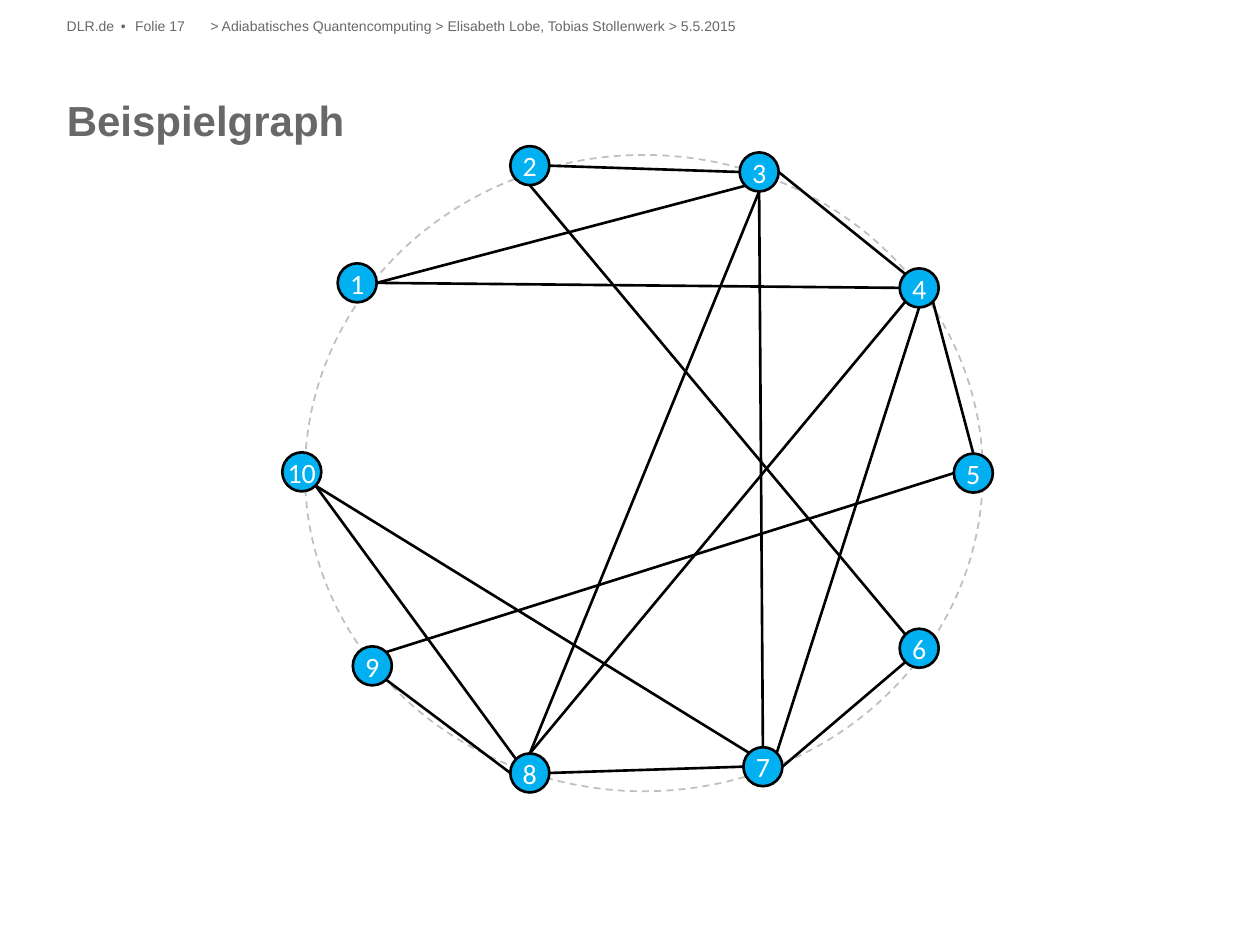
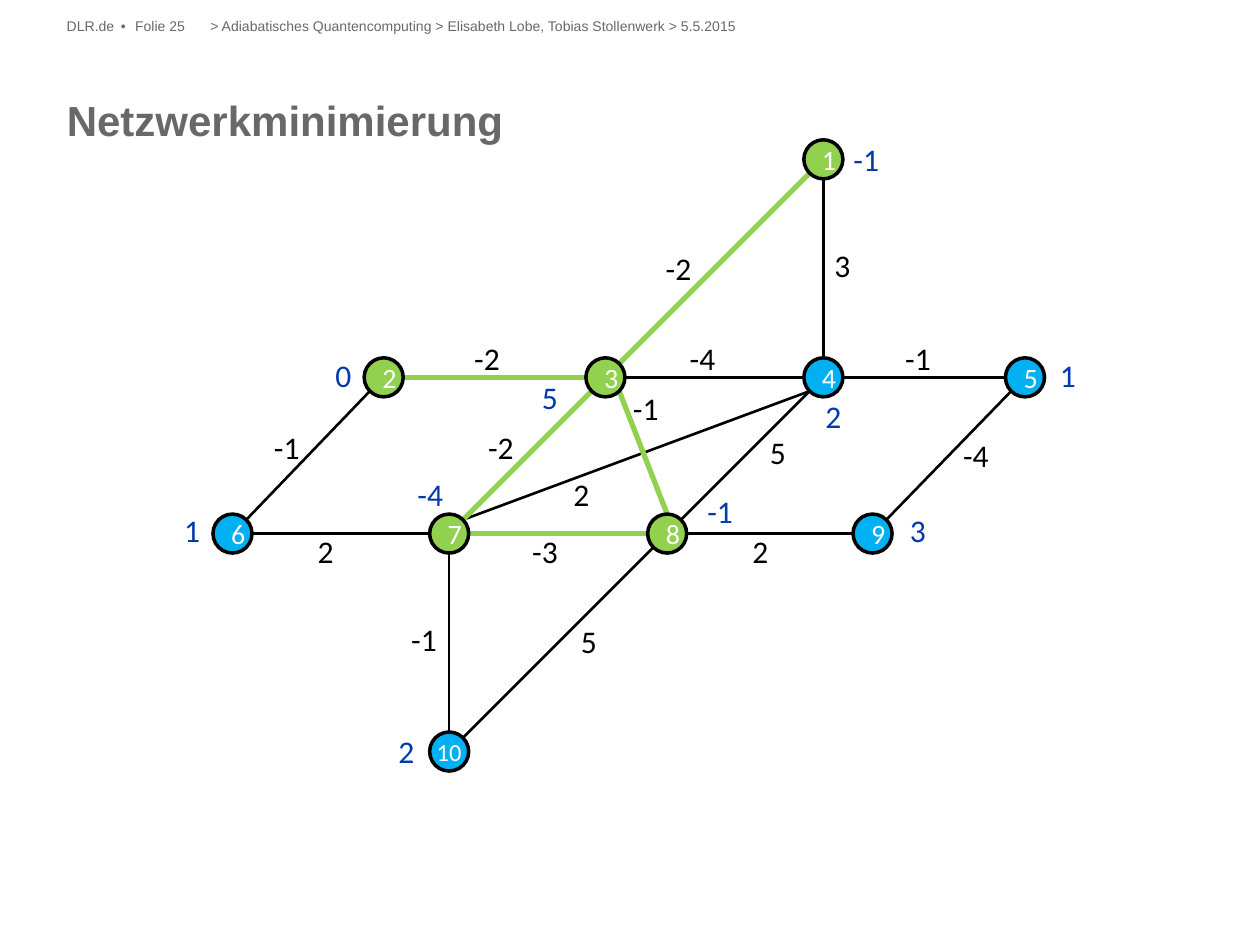
from pptx import Presentation
from pptx.dml.color import RGBColor
from pptx.enum import dml, shapes, text
from pptx.oxml.ns import qn
from pptx.util import Pt

SCALE = 9144  # EMU per px, 100 px to the inch
GREY, BLACK, WHITE = "686868", "000000", "FFFFFF"
BLUE, GREEN, NAVY, PALE = "00B0F0", "92D050", "0039AC", "BFBFBF"
NODE = 31

# Directions from a node's centre to the points where edges attach
D = 0.707
SITES = {"n": (0, -1), "ne": (D, -D), "e": (1, 0), "se": (D, D),
         "s": (0, 1), "sw": (-D, D), "w": (-1, 0), "nw": (-D, -D)}


def color(hex_string):
    return RGBColor.from_string(hex_string)


def add_run(p, words, size, font, hex_string, bold=False):
    r = p.add_run()
    r.text = words
    r.font.size, r.font.name, r.font.bold = Pt(size), font, bold
    r.font.color.rgb = color(hex_string)
    return r


# Node positions (left, top) and edges (node, site, node, site)
example = dict(
    title="Beispielgraph", number=17, wrap=False, outline=1.5,
    ring=(242, 123, 538, 505), marked=[], labels=[],
    nodes={1: (268, 209), 2: (405, 116), 3: (587, 121), 4: (714, 213),
           5: (757, 360), 6: (714, 499), 7: (590, 593), 8: (405, 598),
           9: (280, 513), 10: (224, 359)},
    edges=[(3, "s", 8, "n"), (7, "ne", 4, "s"), (6, "nw", 2, "s"),
           (2, "e", 3, "w"), (6, "sw", 7, "e"), (7, "n", 3, "s"),
           (7, "w", 8, "e"), (7, "nw", 10, "se"), (8, "n", 4, "sw"),
           (3, "e", 4, "nw"), (3, "sw", 1, "e"), (1, "e", 4, "w"),
           (4, "se", 5, "n"), (8, "w", 9, "se"), (10, "se", 8, "nw"),
           (9, "ne", 5, "w")])

TOP, MID, LOW, END = 111, 284, 408, 581  # node rows of the network
network = dict(
    title="Netzwerkminimierung", number=25, wrap=True, outline=2,
    ring=None, marked=[1, 2, 3, 7, 8],
    nodes={1: (638, TOP), 2: (289, MID), 3: (465, MID), 4: (638, MID),
           5: (798, MID), 6: (169, LOW), 7: (341, LOW), 8: (514, LOW),
           9: (677, LOW), 10: (341, END)},
    edges=[(7, "ne", 4, "sw"), (3, "se", 8, "n"), (6, "ne", 2, "sw"),
           (2, "e", 3, "w"), (6, "e", 7, "w"), (7, "ne", 3, "sw"),
           (7, "e", 8, "w"), (7, "s", 10, "n"), (8, "ne", 4, "sw"),
           (3, "e", 4, "w"), (3, "ne", 1, "sw"), (1, "s", 4, "n"),
           (4, "e", 5, "w"), (8, "e", 9, "w"), (10, "ne", 8, "sw"),
           (9, "ne", 5, "sw")],
    labels=[
        # node weights
        (NAVY, [("-1", 667, 106), ("0", 256, 278), ("5", 420, 295),
                ("2", 645, 310), ("1", 831, 278), ("3", 712, 401),
                ("-1", 551, 386), ("2", 306, 576), ("-4", 321, 372),
                ("1", 136, 401)]),
        # edge weights
        (BLACK, [("-2", 518, 193), ("3", 652, 190), ("-1", 708, 264),
                 ("-4", 754, 341), ("2", 587, 417), ("-2", 366, 264),
                 ("-1", 207, 335), ("2", 242, 417), ("5", 451, 489),
                 ("-1", 316, 487), ("-1", 492, 304), ("2", 445, 372),
                 ("-4", 537, 264), ("-3", 412, 417), ("-2", 377, 335),
                 ("5", 601, 339)])])

prs = Presentation()
prs.slide_width, prs.slide_height = 1000 * SCALE, 750 * SCALE

for graph in (example, network):
    s = prs.slides.add_slide(prs.slide_layouts[5])

    # Title
    sp = s.shapes.title
    sp.left, sp.top, sp.width, sp.height = [v * SCALE for v in (53, 71, 894, 81)]
    tf = sp.text_frame
    tf.margin_left = tf.margin_top = tf.margin_right = tf.margin_bottom = 0
    tf.vertical_anchor = text.MSO_ANCHOR.TOP
    tf.auto_size = text.MSO_AUTO_SIZE.NONE
    p = tf.paragraphs[0]
    p.alignment, p.line_spacing = text.PP_ALIGN.LEFT, 1.1
    add_run(p, graph["title"], 24, "Arial", GREY, bold=True)

    # Header line, with letter spacing around the bullet
    header = [(53, 114, ["DLR.de", " • ", f"Folie {graph['number']}"]),
              (167, 780, ["> Adiabatisches Quantencomputing > Elisabeth Lobe, "
                          "Tobias Stollenwerk > 5.5.2015"])]
    for left, width, parts in header:
        tf = s.shapes.add_textbox(left * SCALE, 14 * SCALE, width * SCALE, 16 * SCALE).text_frame
        tf.margin_left = tf.margin_top = tf.margin_right = tf.margin_bottom = 0
        tf.word_wrap = True
        for part in parts:
            r = add_run(tf.paragraphs[0], part, 8, "Arial", GREY)
            if part == " • ":
                r.font._element.set("spc", "150")

    # Dashed ring
    if graph["ring"]:
        sp = s.shapes.add_shape(shapes.MSO_SHAPE.OVAL, *[v * SCALE for v in graph["ring"]])
        sp.shadow.inherit = False
        sp.fill.background()
        sp.line.color.rgb, sp.line.width = color(PALE), Pt(1)
        sp.line.dash_style = dml.MSO_LINE.DASH

    # Weights
    for hex_string, weights in graph["labels"]:
        for words, left, top in weights:
            width = 41 if len(words) > 1 else 33
            sp = s.shapes.add_textbox(left * SCALE, top * SCALE, width * SCALE, 40 * SCALE)
            tf = sp.text_frame
            tf.word_wrap = False
            tf.auto_size = text.MSO_AUTO_SIZE.SHAPE_TO_FIT_TEXT
            tf.paragraphs[0].alignment = text.PP_ALIGN.CENTER
            add_run(tf.paragraphs[0], words, 18, "Calibri", hex_string)

    # Edges; those between two marked nodes are highlighted
    for start, start_site, end, end_site in graph["edges"]:
        ends = []
        for node, site in ((start, start_site), (end, end_site)):
            for corner, step in zip(graph["nodes"][node], SITES[site]):
                ends.append(round((corner + NODE / 2 * (1 + step)) * SCALE))
        line = s.shapes.add_connector(shapes.MSO_CONNECTOR.STRAIGHT, *ends)
        marked = start in graph["marked"] and end in graph["marked"]
        line.line.color.rgb = color(GREEN if marked else BLACK)
        line.line.width = Pt(3 if marked else 1.5)
        sp_pr = line._element.spPr
        sp_pr.append(sp_pr.makeelement(qn("a:effectLst"), {}))

    # Nodes
    for node, (left, top) in graph["nodes"].items():
        sp = s.shapes.add_shape(shapes.MSO_SHAPE.OVAL, left * SCALE, top * SCALE,
                                NODE * SCALE, NODE * SCALE)
        sp.shadow.inherit = False
        sp.fill.solid()
        sp.fill.fore_color.rgb = color(GREEN if node in graph["marked"] else BLUE)
        sp.line.color.rgb, sp.line.width = color(BLACK), Pt(graph["outline"])
        tf = sp.text_frame
        tf.vertical_anchor = text.MSO_ANCHOR.MIDDLE
        tf.word_wrap = graph["wrap"] and node < 10
        tf.paragraphs[0].alignment = text.PP_ALIGN.CENTER
        size = 14 if graph["wrap"] and node == 10 else 16
        add_run(tf.paragraphs[0], str(node), size, "Calibri", WHITE)

prs.save("out.pptx")
